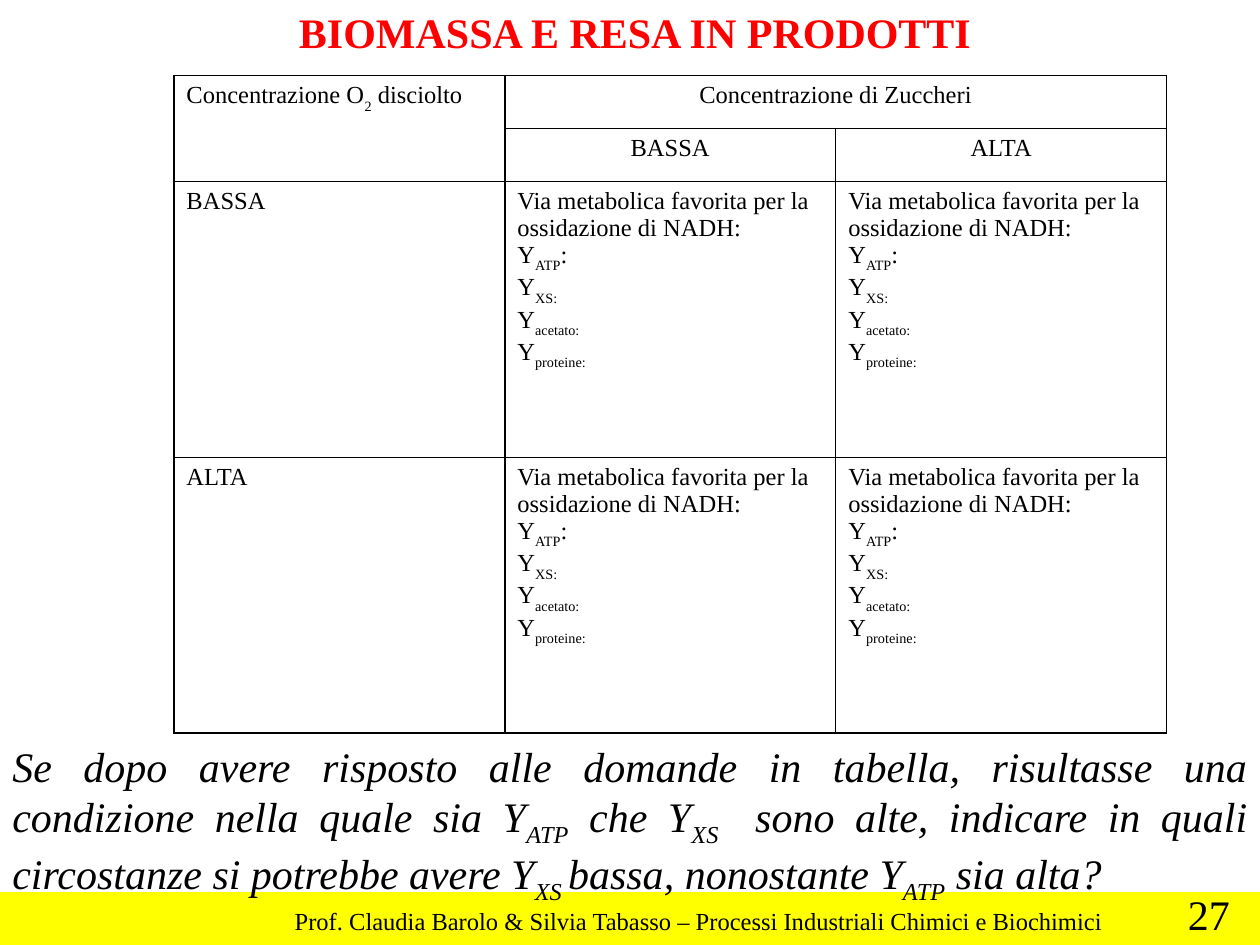
"""Build the slide on biomass and product yield with its question table."""
from dataclasses import dataclass

from lxml import etree
from pptx import Presentation
from pptx import util as u
from pptx.dml.color import RGBColor
from pptx.enum import shapes, text
from pptx.oxml import ns


@dataclass(frozen=True)
class Theme:
    font: str = "Times New Roman"
    ink: RGBColor = RGBColor(0, 0, 0)
    title: RGBColor = RGBColor(255, 0, 0)
    band: RGBColor = RGBColor(255, 255, 0)
    large: int = 24
    small: int = 14
    border: int = 1


theme = Theme()
A = text.PP_ALIGN


def write(tf, lines, size, align=A.LEFT, color=theme.ink, bold=False, italic=False, drop=-30):
    """Fill a text frame; parts between bars are subscripts."""
    for i, line in enumerate(lines):
        p = tf.add_paragraph() if i else tf.paragraphs[0]
        p.alignment = align
        p.font.name, p.font.size = theme.font, u.Pt(size)
        p.font.color.rgb = color
        p.font.bold, p.font.italic = bold, italic
        for j, part in enumerate(line.split("|")):
            if part:
                r = p.add_run()
                r.text = part
                if j % 2:
                    r.font._element.set("baseline", str(drop * 1000))


def add_text(s, box, line, size, wrap=False, **style):
    """Add a text box holding one paragraph."""
    tf = s.shapes.add_textbox(*map(u.Inches, box)).text_frame
    tf.word_wrap = wrap
    tf.auto_size = text.MSO_AUTO_SIZE.SHAPE_TO_FIT_TEXT
    write(tf, [line], size, **style)
    return tf


prs = Presentation()
prs.slide_width, prs.slide_height = u.Inches(10), u.Inches(7.5)
s = prs.slides.add_slide(prs.slide_layouts[5])

band = s.shapes.add_shape(shapes.MSO_SHAPE.RECTANGLE, 0, u.Inches(7.08), u.Inches(10), u.Inches(0.42))
band.shadow.inherit = False
band.fill.solid()
band.fill.fore_color.rgb = theme.band
band.line.fill.background()

add_text(s, (2.24, 7.14, 6.71, 0.34),
         "Prof. Claudia Barolo & Silvia Tabasso – Processi Industriali Chimici e Biochimici", theme.small)
add_text(s, (9.33, 7, 0.53, 0.5), "27", theme.large)

question = (
    "Se dopo avere risposto alle domande in tabella, risultasse una condizione nella quale sia Y|ATP| "
    "che Y|XS | sono alte, indicare in quali circostanze si potrebbe avere Y|XS |bassa, "
    "nonostante Y|ATP| sia alta?"
)
tf = add_text(s, (0, 5.88, 10, 1.3), question, theme.large, wrap=True,
              align=A.JUSTIFY, italic=True, drop=-25)
tf.vertical_anchor = text.MSO_ANCHOR.MIDDLE

answers = ["Via metabolica favorita per la ossidazione di NADH:",
           "Y|ATP|:", "Y|XS:|", "Y|acetato:|", "Y|proteine:|"]
rows = [
    [["Concentrazione O|2| disciolto"], ["Concentrazione di Zuccheri"], []],
    [[], ["BASSA"], ["ALTA"]],
    [["BASSA"], answers, answers],
    [["ALTA"], answers, answers],
]
heights = [0.42, 0.42, 2.19, 2.19]
frame = s.shapes.add_table(4, 3, u.Inches(1.38), u.Inches(0.6), u.Inches(7.88), u.Inches(sum(heights)))
table = frame.table
table.first_row = table.horz_banding = False
for col in table.columns:
    col.width = u.Inches(7.88 / 3)
for row, height in zip(table.rows, heights):
    row.height = u.Inches(height)
table.cell(0, 0).merge(table.cell(1, 0))
table.cell(0, 1).merge(table.cell(0, 2))

for i, row in enumerate(rows):
    for j, lines in enumerate(row):
        cell = table.cell(i, j)
        write(cell.text_frame, lines, theme.small, A.CENTER if i < 2 and j else A.LEFT)
        tc_pr = cell._tc.get_or_add_tcPr()
        for side in ("lnL", "lnR", "lnT", "lnB"):
            ln = etree.SubElement(tc_pr, ns.qn(f"a:{side}"), w=str(u.Pt(theme.border)))
            fill = etree.SubElement(ln, ns.qn("a:solidFill"))
            etree.SubElement(fill, ns.qn("a:srgbClr"), val=str(theme.ink))
        cell.fill.background()

title = s.shapes.title
title.left, title.top, title.width, title.height = map(u.Inches, (0.59, 0, 8.9, 0.5))
tf = title.text_frame
tf.vertical_anchor = text.MSO_ANCHOR.TOP
tf.auto_size = text.MSO_AUTO_SIZE.SHAPE_TO_FIT_TEXT
write(tf, ["BIOMASSA E RESA IN PRODOTTI"], theme.large, A.CENTER, theme.title, bold=True)

prs.save("out.pptx")
